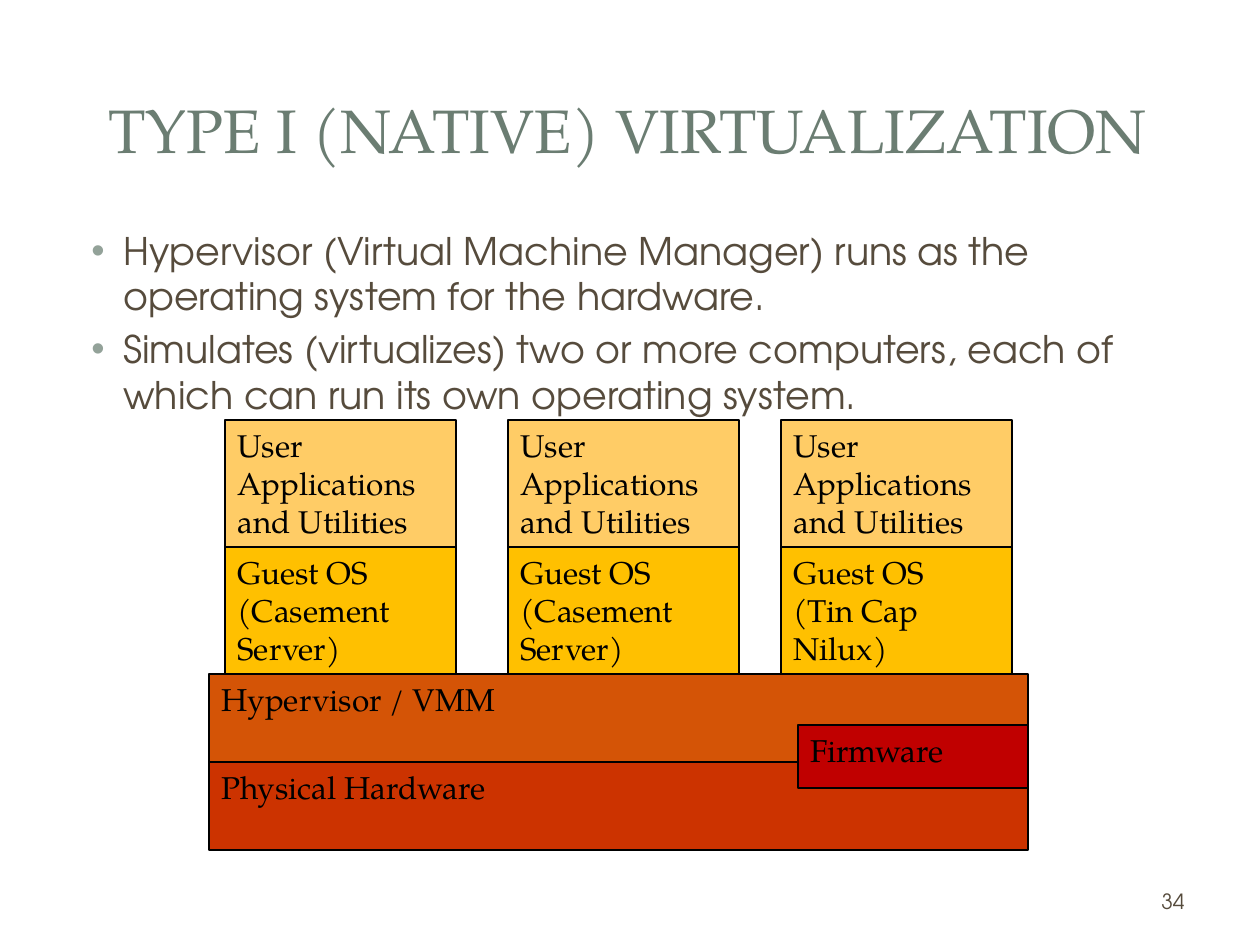
from lxml import etree
from pptx import Presentation
from pptx.dml.color import RGBColor
from pptx.enum.shapes import MSO_SHAPE as Shape
from pptx.enum.text import MSO_ANCHOR as Anchor, PP_ALIGN as Align
from pptx.oxml.ns import qn
from pptx.util import Pt

PX = 7257  # EMU, at 126 px to the inch
SERIF, SANS = "TeX Gyre Pagella", "TeX Gyre Adventor"
COLORS = {
    "title": "6B7D72", "body": "564B3C", "bullet": "93A299", "ink": "000000",
    "apps": "FFCC66", "guest": "FFC000", "hypervisor": "D45406",
    "hardware": "CC3300", "firmware": "C00000",
}


def color(name):
    return RGBColor.from_string(COLORS[name])


def emu(box):
    return [length * PX for length in box]


def add_run(para, text, size, font, ink):
    span = para.add_run()
    span.text = text
    span.font.size = Pt(size)
    span.font.name = font
    span.font.color.rgb = color(ink)


def add_text_box(page, box, anchor):
    frame = page.shapes.add_textbox(*emu(box)).text_frame
    frame.word_wrap = True
    frame.vertical_anchor = anchor
    return frame


def add_line(page, box, text, size, font, ink, align):
    para = add_text_box(page, box, Anchor.MIDDLE).paragraphs[0]
    para.alignment = align
    add_run(para, text, size, font, ink)


def add_bullet(para):
    props = para._p.get_or_add_pPr()
    props.set("marL", str(48 * PX))
    props.set("indent", str(-32 * PX))
    tint = etree.SubElement(props, qn("a:buClr"))
    etree.SubElement(tint, qn("a:srgbClr")).set("val", COLORS["bullet"])
    etree.SubElement(props, qn("a:buFont")).set("typeface", "Arial")
    etree.SubElement(props, qn("a:buChar")).set("char", "•")


def add_bullet_list(page, box, items):
    frame = add_text_box(page, box, Anchor.TOP)
    for index, item in enumerate(items):
        para = frame.add_paragraph() if index else frame.paragraphs[0]
        para.space_before = Pt(4.3)
        add_bullet(para)
        add_run(para, item, 21.7, SANS, "body")


def add_layer(page, box, fill, *lines):
    """Add one outlined block of the stack, its lines split by line breaks."""
    layer = page.shapes.add_shape(Shape.RECTANGLE, *emu(box))
    layer.shadow.inherit = False
    layer.fill.solid()
    layer.fill.fore_color.rgb = color(fill)
    layer.line.color.rgb = color("ink")
    layer.line.width = Pt(0.75)
    frame = layer.text_frame
    frame.word_wrap = True
    frame.vertical_anchor = Anchor.TOP
    para = frame.paragraphs[0]
    para.alignment = Align.LEFT
    for index, line in enumerate(lines):
        if index:
            para.add_line_break()
        add_run(para, line, 18, SERIF, "ink")


def add_host(page, box):
    """Add hardware and hypervisor, with firmware across their right end."""
    left, top, width, height = box
    half = height // 2
    add_layer(page, (left, top + half, width, half), "hardware", "Physical Hardware")
    add_layer(page, (left, top, width, half), "hypervisor", "Hypervisor / VMM")
    firmware_width = 230
    add_layer(page, (left + width - firmware_width, top + 51, firmware_width, 63),
              "firmware", "Firmware")


def add_virtual_machine(page, box, system):
    left, top, width, height = box
    half = height // 2
    add_layer(page, (left, top, width, half), "apps", "User Applications and Utilities")
    add_layer(page, (left, top + half, width, half), "guest", "Guest OS", system)


def main():
    deck = Presentation()
    deck.slide_width, deck.slide_height = emu((1260, 945))
    page = deck.slides.add_slide(deck.slide_layouts[6])

    add_line(page, (59, 57, 1138, 144), "TYPE I (NATIVE) VIRTUALIZATION",
             35, SERIF, "title", Align.CENTER)
    add_bullet_list(page, (63, 221, 1134, 179), (
        "Hypervisor (Virtual Machine Manager) runs as the operating system for the hardware.",
        "Simulates (virtualizes) two or more computers, each of which can run its own "
        "operating system.",
    ))
    add_line(page, (903, 876, 294, 50), "34", 12, SANS, "body", Align.RIGHT)

    add_host(page, (209, 674, 819, 176))
    machines = ((225, "(Casement Server)"), (508, "(Casement Server)"),
                (781, "(Tin Cap Nilux)"))
    for left, system in machines:
        add_virtual_machine(page, (left, 420, 231, 254), system)

    deck.save("out.pptx")


if __name__ == "__main__":
    main()
